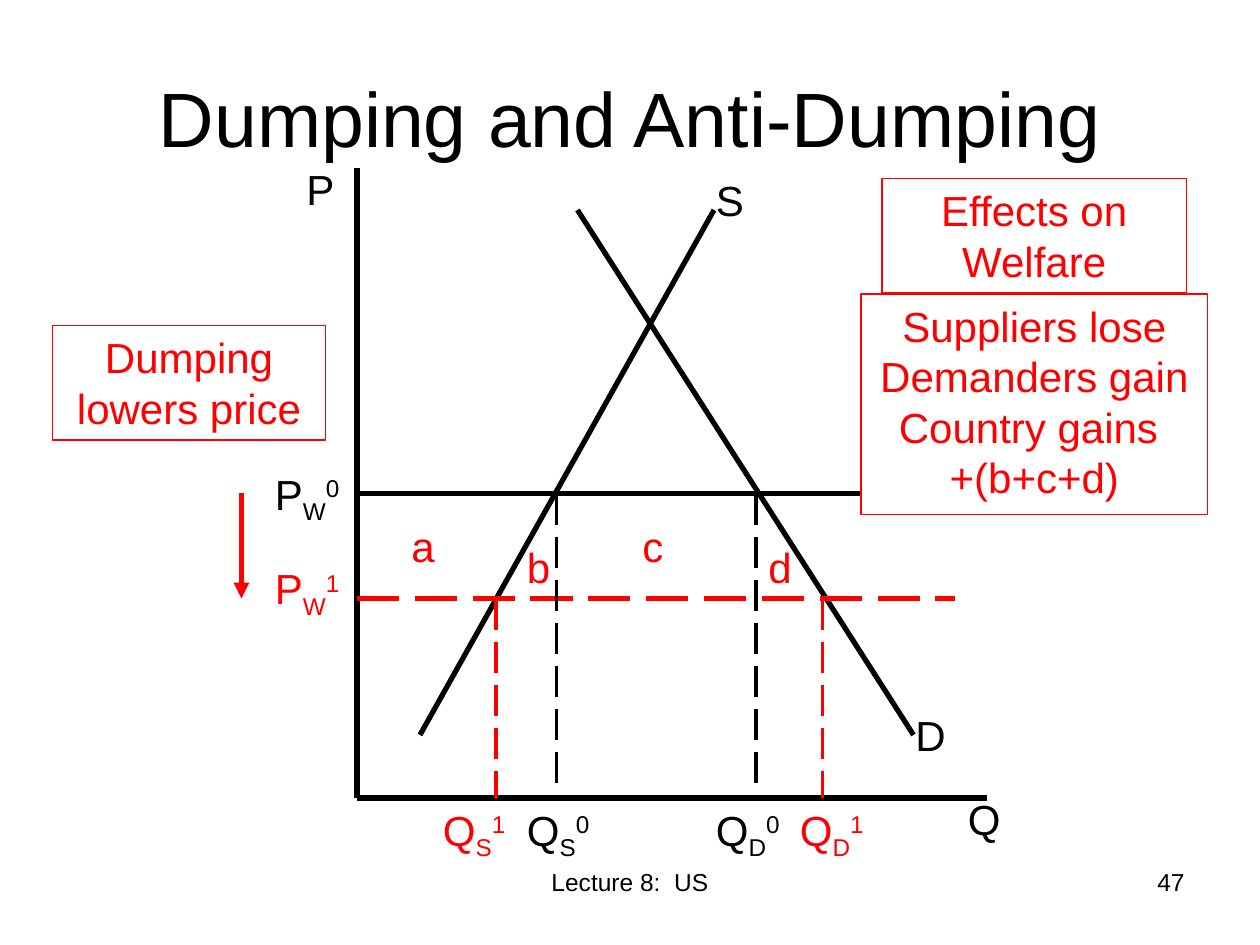
import pptx
import pptx.dml.color
import pptx.enum.dml
import pptx.enum.shapes
import pptx.enum.text
import pptx.oxml.ns
import pptx.util
import lxml.etree

Pt = pptx.util.Pt
ALIGN = pptx.enum.text.PP_ALIGN
ANCHOR = pptx.enum.text.MSO_ANCHOR
BLACK, RED, WHITE = "000000", "FF0000", "FFFFFF"


def rgb(value):
    return pptx.dml.color.RGBColor.from_string(value)


def write_text(shape, text, size=24, color=BLACK, align=ALIGN.LEFT,
               anchor=ANCHOR.TOP, font="Arial", sub="", sup=""):
    """Fill a shape with text; sub and sup follow its last paragraph."""
    frame = shape.text_frame
    frame.word_wrap = True
    frame.vertical_anchor = anchor
    frame.text = text
    paragraphs = frame.paragraphs
    for script, baseline in ((sub, -25000), (sup, 30000)):
        if script:
            run = paragraphs[-1].add_run()
            run.text = script
            run.font._element.set("baseline", str(baseline))
    for paragraph in paragraphs:
        paragraph.alignment = align
        for run in paragraph.runs:
            run.font.name = font
            run.font.size = Pt(size)
            run.font.color.rgb = rgb(color)


class Diagram:
    def __init__(self, slide, axis_width=3, guide_width=2.25, frame_width=0.75):
        self.shapes = slide.shapes
        self.axis_width = axis_width
        self.guide_width = guide_width
        self.frame_width = frame_width

    def label(self, text, left, top, width=60, height=36, **style):
        box = self.shapes.add_textbox(Pt(left), Pt(top), Pt(width), Pt(height))
        write_text(box, text, **style)

    def line(self, start, end, color=BLACK, width=None, dashed=False, arrow=False):
        line = self.shapes.add_connector(
            pptx.enum.shapes.MSO_CONNECTOR.STRAIGHT, *map(Pt, start + end))
        line.line.color.rgb = rgb(color)
        line.line.width = Pt(width or self.axis_width)
        if dashed:
            line.line.dash_style = pptx.enum.dml.MSO_LINE.LONG_DASH
        qn = pptx.oxml.ns.qn
        properties = line._element.spPr
        if arrow:
            lxml.etree.SubElement(properties.find(qn("a:ln")), qn("a:tailEnd"),
                                  type="triangle")
        lxml.etree.SubElement(properties, qn("a:effectLst"))

    def guide(self, quantity, price, color):
        """Drop a dashed line from the price to the quantity axis."""
        self.line((quantity, price), (quantity, AXIS_Y), color,
                  self.guide_width, dashed=True)

    def note(self, text, left, top, width, height, fill=None):
        box = self.shapes.add_shape(pptx.enum.shapes.MSO_SHAPE.RECTANGLE,
                                    Pt(left), Pt(top), Pt(width), Pt(height))
        box.shadow.inherit = False
        if fill:
            box.fill.solid()
            box.fill.fore_color.rgb = rgb(fill)
        else:
            box.fill.background()
        box.line.color.rgb = rgb(RED)
        box.line.width = Pt(self.frame_width)
        write_text(box, text, color=RED, align=ALIGN.CENTER)


presentation = pptx.Presentation()
presentation.slide_width, presentation.slide_height = Pt(720), Pt(540)
diagram = Diagram(presentation.slides.add_slide(presentation.slide_layouts[6]))

AXIS_X, AXIS_Y = 204, 456
WORLD_PRICE, DUMPED_PRICE, PRICE_END = 282, 342, 546

diagram.label("Lecture 8:  US", 246, 492, 228, size=14, align=ALIGN.CENTER)
diagram.label("47", 516, 492, 168, size=14, align=ALIGN.RIGHT)
diagram.label("Dumping and Anti-Dumping", 36, 21.6, 648, 90, size=44,
              align=ALIGN.CENTER, anchor=ANCHOR.MIDDLE)

# Axes, supply, demand and the two prices
diagram.line((AXIS_X, 96), (AXIS_X, AXIS_Y))
diagram.line((AXIS_X, AXIS_Y), (564, AXIS_Y))
diagram.line((408, 120), (240, 420))
diagram.line((330, 120), (522, 420))
diagram.line((AXIS_X, WORLD_PRICE), (PRICE_END, WORLD_PRICE))
for quantity in (283.5, 470):
    diagram.guide(quantity, DUMPED_PRICE, RED)
diagram.line((AXIS_X, DUMPED_PRICE), (PRICE_END, DUMPED_PRICE), RED, dashed=True)
for quantity in (318, 432):
    diagram.guide(quantity, WORLD_PRICE, BLACK)

for name, left, top in (("P", 168, 90), ("Q", 546, 450),
                        ("S", 402, 96), ("D", 516, 402)):
    diagram.label(name, left, top, 42)
for area, left, top in (("a", 228, 294), ("b", 294, 306),
                        ("c", 360, 294), ("d", 432, 306)):
    diagram.label(area, left, top, 42, color=RED)
for name, sub, sup, left, top, color in (
        ("P", "W", "0", 150, 264, BLACK), ("P", "W", "1", 150, 318, RED),
        ("Q", "S", "0", 294, AXIS_Y, BLACK), ("Q", "S", "1", 246, AXIS_Y, RED),
        ("Q", "D", "0", 402, AXIS_Y, BLACK), ("Q", "D", "1", 450, AXIS_Y, RED)):
    diagram.label(name, left, top, color=color, sub=sub, sup=sup)

diagram.note("Effects on Welfare", 504, 102, 174, 65.5)
diagram.note("Suppliers lose Demanders gain Country gains \n+(b+c+d)",
             492, 168, 198, 126, fill=WHITE)
diagram.line((138, WORLD_PRICE), (138, DUMPED_PRICE), RED, arrow=True)
diagram.note("Dumping lowers price", 30, 186, 156, 65.5)

presentation.save("out.pptx")
